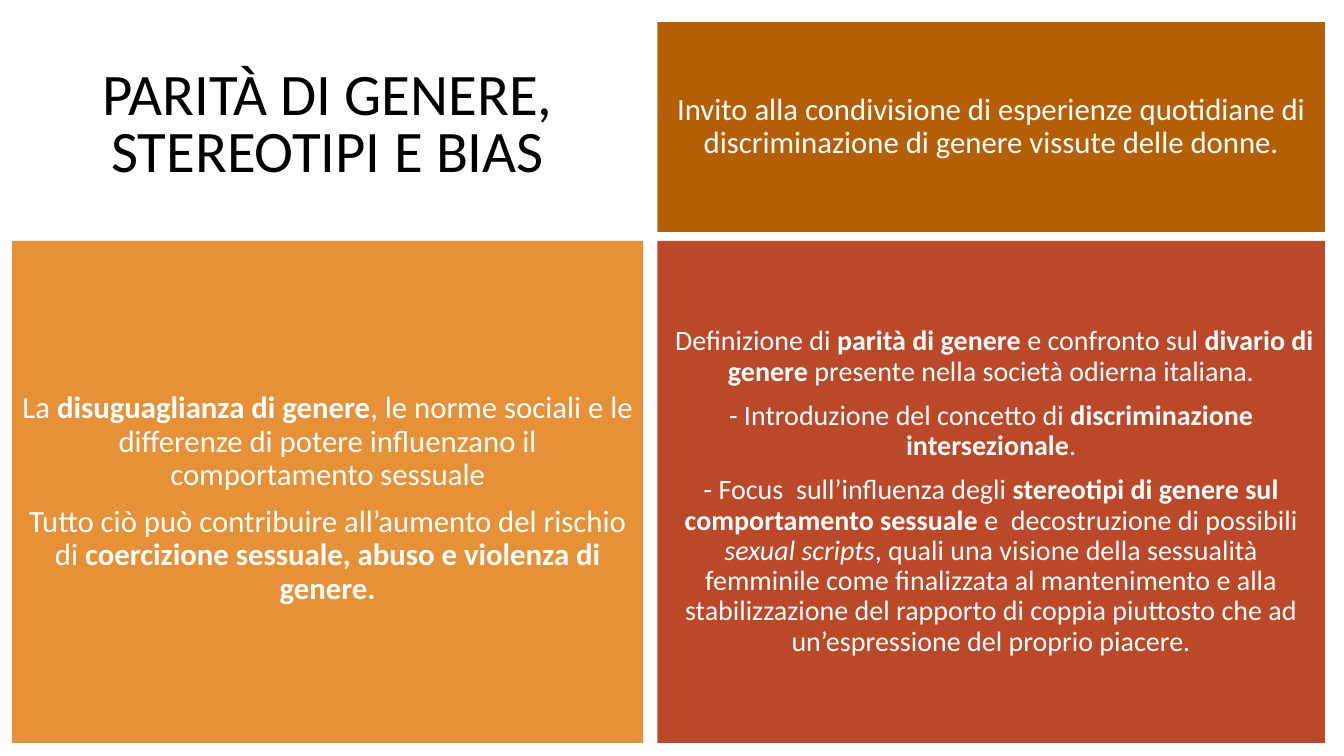
from lxml import etree
from pptx import Presentation
from pptx.dml.color import RGBColor
from pptx.enum.shapes import MSO_SHAPE
from pptx.enum.text import MSO_ANCHOR, MSO_AUTO_SIZE, PP_ALIGN
from pptx.oxml.ns import qn
from pptx.util import Inches, Pt

RECTANGLE = MSO_SHAPE.RECTANGLE
MIDDLE = MSO_ANCHOR.MIDDLE
NO_AUTOFIT = MSO_AUTO_SIZE.NONE
CENTER = PP_ALIGN.CENTER

BLACK = RGBColor(0x00, 0x00, 0x00)
WHITE = RGBColor(0xFF, 0xFF, 0xFF)
BROWN = RGBColor(0xB4, 0x5F, 0x06)
ORANGE = RGBColor(0xE6, 0x91, 0x38)
RED = RGBColor(0xB4, 0x35, 0x12)
FONT = "Calibri"
TITLE_ONLY = 5

# A run is (text, style), where the style is "", "bold" or "italic".
TITLE = [[("PARITÀ DI GENERE, STEREOTIPI E BIAS", "")]]
INVITATION = [
    [("Invito alla condivisione di esperienze quotidiane di discriminazione "
      "di genere vissute delle donne.", "")],
]
INEQUALITY = [
    [("La ", ""), ("disuguaglianza di genere", "bold"),
     (", le norme sociali e le differenze di potere influenzano il "
      "comportamento sessuale", "")],
    [("Tutto ciò può contribuire all’aumento del rischio di ", ""),
     ("coercizione sessuale, abuso e violenza di genere.", "bold")],
]
DEFINITIONS = [
    [(" Definizione di ", ""), ("parità di genere ", "bold"),
     ("e confronto sul ", ""), ("divario di genere ", "bold"),
     ("presente nella società odierna italiana.", "")],
    [("- Introduzione del concetto di", ""),
     (" discriminazione intersezionale", "bold"), (".", "")],
    [("- Focus  sull’influenza degli ", ""),
     ("stereotipi di genere sul comportamento sessuale ", "bold"),
     ("e  decostruzione di possibili ", ""), ("sexual scripts", "italic"),
     (", quali una visione della sessualità femminile come finalizzata al "
      "mantenimento e alla stabilizzazione del rapporto di coppia piuttosto "
      "che ad un’espressione del proprio piacere.", "")],
]

# Two columns (left, width) and two rows (top, height), in inches
COLUMNS = [(0.12, 6.26), (6.52, 6.62)]
ROWS = [(0.22, 2.08), (2.39, 4.98)]

# column, row, colour, opacity in percent, text size, top inset, paragraphs
PANELS = [
    (1, 0, BROWN, 100, 22, 0.1, INVITATION),
    (0, 1, ORANGE, 100, 22, 0.24, INEQUALITY),
    (1, 1, RED, 90, 20, 0.1, DEFINITIONS),
]


def cell_bounds(column, row):
    """Return left, top, width and height of a grid cell."""
    left, width = COLUMNS[column]
    top, height = ROWS[row]
    return [Inches(value) for value in (left, top, width, height)]


def write_text(shape, paragraphs, size, color, line_spacing, space_before,
               top_inset, bottom_inset):
    frame = shape.text_frame
    frame.word_wrap = True
    frame.auto_size = NO_AUTOFIT
    frame.vertical_anchor = MIDDLE
    frame.margin_left = frame.margin_right = Inches(0.1)
    frame.margin_top = Inches(top_inset)
    frame.margin_bottom = Inches(bottom_inset)
    for index, runs in enumerate(paragraphs):
        paragraph = frame.add_paragraph() if index else frame.paragraphs[0]
        paragraph.alignment = CENTER
        paragraph.line_spacing = line_spacing
        paragraph.space_before = Pt(space_before)
        for text, style in runs:
            run = paragraph.add_run()
            run.text = text
            run.font.name = FONT
            run.font.size = Pt(size)
            run.font.color.rgb = color
            run.font.bold = style == "bold"
            run.font.italic = style == "italic"


def set_opacity(shape, percent):
    color = shape.fill._xPr.find(qn("a:solidFill"))[0]
    etree.SubElement(color, qn("a:alpha")).set("val", str(percent * 1000))


def add_panel(slide, column, row, color, opacity, size, top_inset, paragraphs):
    panel = slide.shapes.add_shape(RECTANGLE, *cell_bounds(column, row))
    panel.shadow.inherit = False
    panel.fill.solid()
    panel.fill.fore_color.rgb = color
    panel.line.fill.background()
    if opacity < 100:
        set_opacity(panel, opacity)
    write_text(panel, paragraphs, size, WHITE, 0.9, 10, top_inset, 0.1)


def main():
    presentation = Presentation()
    presentation.slide_width = Inches(13.33)
    presentation.slide_height = Inches(7.5)
    slide = presentation.slides.add_slide(
        presentation.slide_layouts[TITLE_ONLY])

    title = slide.shapes.title
    title.left, title.top, title.width, title.height = cell_bounds(0, 0)
    write_text(title, TITLE, 42, BLACK, 0.8, 0, 0.05, 0.05)

    for panel in PANELS:
        add_panel(slide, *panel)

    presentation.save("out.pptx")


if __name__ == "__main__":
    main()
